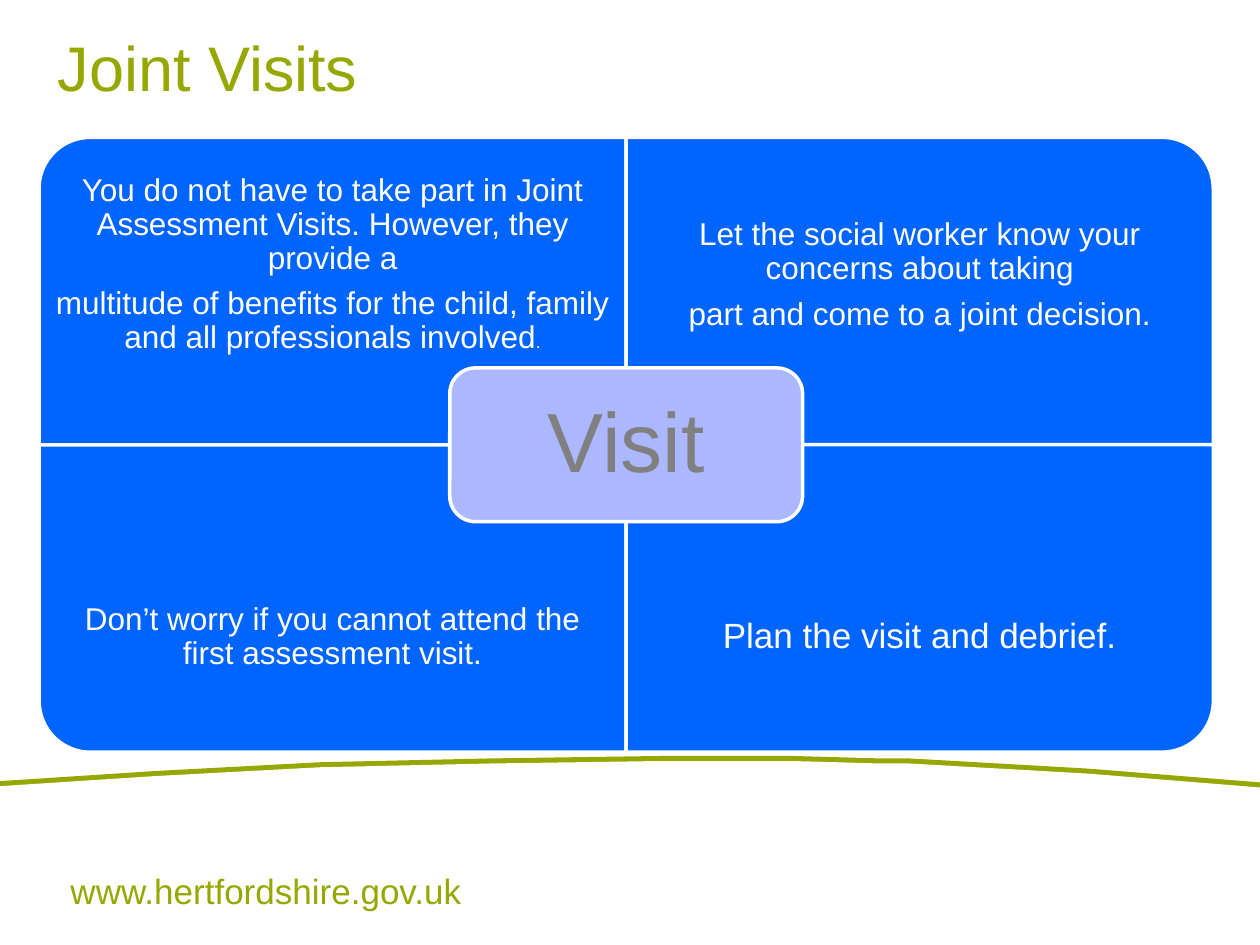
from dataclasses import dataclass

from pptx import Presentation
from pptx.dml.color import RGBColor
from pptx.enum import shapes as kinds, text as t
from pptx import util as u

HEX = {"green": "96A800", "white": "FFFFFF", "blue": "0064FF",
       "lilac": "ABB8FF", "grey": "808080"}
LEFT, TOP, WIDE, HIGH = 0.31, 1.09, 4.66, 2.44
BODY = 0.75 * HIGH
HUB_W, HUB_H = 2.8, 1.22
CURVE = [(0, 6.2), (1.23, 6.12), (2.54, 6.05), (3.89, 6.02), (5.25, 6),
         (6.29, 6), (6.99, 6.02), (7.22, 6.02), (8.63, 6.1), (10, 6.21)]


@dataclass
class Panel:
    col: int
    row: int
    turn: int
    paras: list
    size: int
    pad: float
    drop: float = 0


PANELS = [
    Panel(0, 0, 270, [
        [("You do not have to take part in Joint Assessment Visits. "
          "However, they provide a", 18)],
        [("multitude of benefits for the child, family and all "
          "professionals involved", 18), (".", 10)]], 18, 0.08, 0.2),
    Panel(1, 0, 0, [
        [("Let the social worker know your concerns about taking", 18)],
        [("part and come to a joint decision.", 18)]], 18, 0.14, 0.36),
    Panel(0, 1, 180, [
        [("Don’t worry if you cannot attend the first assessment visit.",
          18)]], 18, 0.14),
    Panel(1, 1, 90, [[("Plan the visit and debrief.", 20)]], 20, 0.16),
]


def tint(name: str) -> RGBColor:
    return RGBColor.from_string(HEX[name])


def paint(shape, fill: str, edge: str = "") -> None:
    shape.shadow.inherit = False
    shape.fill.solid()
    shape.fill.fore_color.rgb = tint(fill)
    if edge:
        shape.line.color.rgb = tint(edge)
        shape.line.width = u.Pt(2)
    else:
        shape.line.fill.background()


def write(slide, paras: list, box: tuple, *, size: int, color: str,
          pad: tuple = (0, 0, 0, 0), center: bool = False,
          anchor=t.MSO_ANCHOR.MIDDLE) -> None:
    """Place paragraphs, each a list of (words, size) runs, in a text box."""
    frame = slide.shapes.add_textbox(*map(u.Inches, box)).text_frame
    frame.word_wrap = True
    frame.vertical_anchor = anchor
    (frame.margin_left, frame.margin_top,
     frame.margin_right, frame.margin_bottom) = map(u.Inches, pad)
    for i, runs in enumerate(paras):
        para = frame.add_paragraph() if i else frame.paragraphs[0]
        if center:
            para.alignment = t.PP_ALIGN.CENTER
            para.line_spacing = 0.9
            para.space_after = u.Pt(0.35 * size)
        for words, points in runs:
            run = para.add_run()
            run.text = words
            run.font.name = "Arial"
            run.font.size = u.Pt(points)
            run.font.color.rgb = tint(color)


def draw_hill(slide, drop: float, color: str) -> None:
    """Fill the area from the curve, lowered by drop, to the slide's foot."""
    rim = [(x, y + drop) for x, y in CURVE] + [(10, 7.5), (0, 7.5)]
    pts = [(u.Inches(x), u.Inches(y)) for x, y in rim]
    path = slide.shapes.build_freeform(*pts[0])
    path.add_line_segments(pts[1:], close=True)
    paint(path.convert_to_shape(), color)


def draw_panel(slide, panel: Panel) -> None:
    x, y = LEFT + panel.col * WIDE, TOP + panel.row * HIGH
    w, h = (HIGH, WIDE) if panel.turn % 180 else (WIDE, HIGH)
    box = (x + (WIDE - w) / 2, y + (HIGH - h) / 2, w, h)
    shape = slide.shapes.add_shape(
        kinds.MSO_SHAPE.ROUND_1_RECTANGLE, *map(u.Inches, box))
    shape.rotation = panel.turn
    paint(shape, "blue", "white")
    pad = panel.pad
    write(slide, panel.paras, (x, y + panel.row * (HIGH - BODY), WIDE, BODY),
          size=panel.size, color="white", center=True,
          pad=(pad, pad + panel.drop, pad, pad))


def draw_hub(slide) -> None:
    box = (LEFT + WIDE - HUB_W / 2, TOP + HIGH - HUB_H / 2, HUB_W, HUB_H)
    shape = slide.shapes.add_shape(
        kinds.MSO_SHAPE.ROUNDED_RECTANGLE, *map(u.Inches, box))
    paint(shape, "lilac", "white")
    write(slide, [[("Visit", 48)]], box, size=48, color="grey",
          pad=(0.2,) * 4, center=True)


def main() -> None:
    deck = Presentation()
    deck.slide_width, deck.slide_height = u.Inches(10), u.Inches(7.5)
    slide = deck.slides.add_slide(deck.slide_layouts[6])
    draw_hill(slide, 0, "green")
    draw_hill(slide, 0.04, "white")
    write(slide, [[("www.hertfordshire.gov.uk", 20)]], (0.56, 6.9, 3.64, 0.34),
          size=20, color="green", anchor=t.MSO_ANCHOR.TOP)
    write(slide, [[("Joint Visits", 36)]], (0.36, 0.13, 9.4, 0.79),
          size=36, color="green", pad=(0.1, 0.05, 0.1, 0.05))
    for panel in PANELS:
        draw_panel(slide, panel)
    draw_hub(slide)
    deck.save("out.pptx")


if __name__ == "__main__":
    main()
